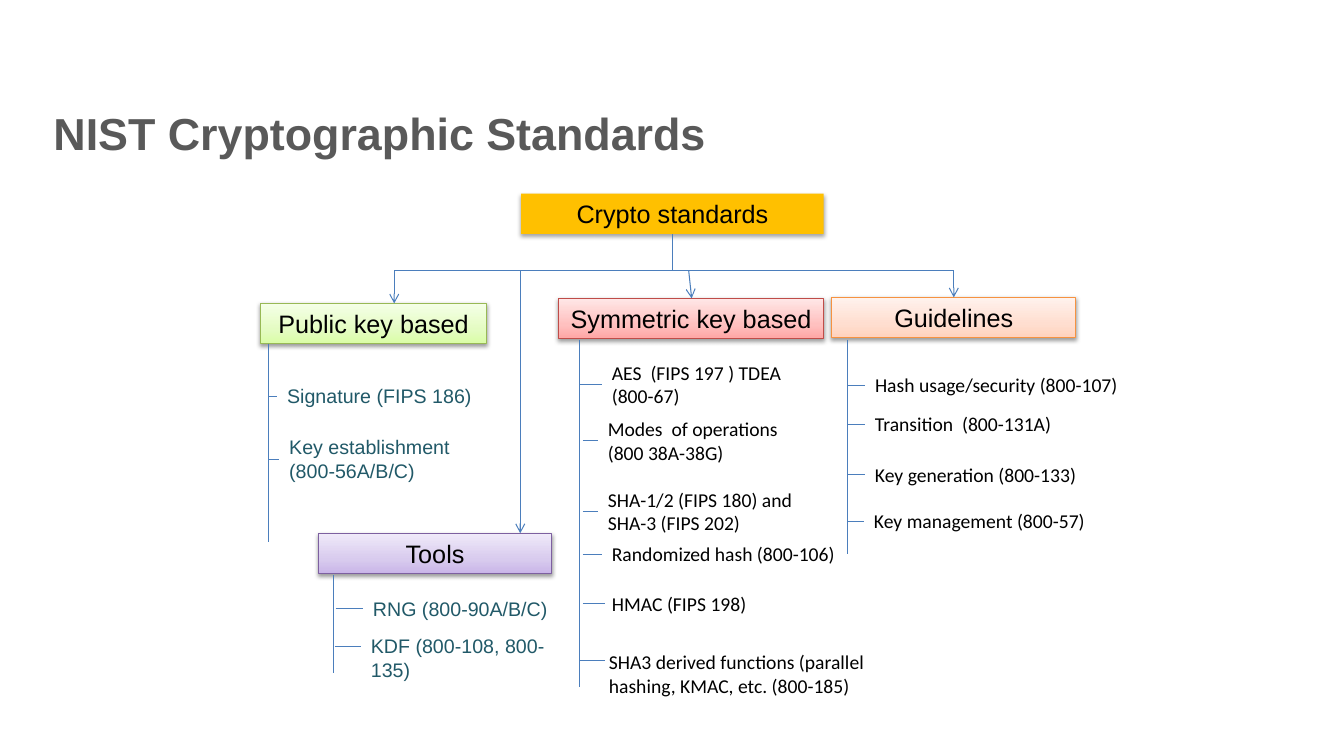
from copy import deepcopy
from dataclasses import dataclass

from lxml import etree
from pptx import Presentation, util as u
from pptx.dml.color import RGBColor
from pptx.enum import shapes, text
from pptx.oxml.ns import qn

# Grid: square cells, 13.33 columns by 7.5 rows
CELL = u.Inches(1)
COLUMNS, ROWS = 13.33, 7.5
ONE_LINE, TWO_LINES, BOX_ROWS = 0.34, 0.57, 0.4


@dataclass(frozen=True)
class Theme:
    sans: str = "Arial"
    humanist: str = "Calibri"
    title_size: int = 32
    box_size: int = 18
    item_size: int = 14
    title: str = "595959"
    black: str = "000000"
    teal: str = "215968"
    line: str = "4B7EBC"
    line_width: float = 0.75
    root: tuple = ("FFC000",)
    green: tuple = ("DAFDA7", "E4FCC2", "F5FFE7")
    purple: tuple = ("C9B5E8", "D8CBEE", "F0EAF9")
    red: tuple = ("FFA6A5", "FFC0BF", "FFE7E7")
    orange: tuple = ("FFD2BD", "FFDED0", "FFF2ED")
    green_edge: str = "98B955"
    purple_edge: str = "7D60A0"
    red_edge: str = "BF4C48"
    orange_edge: str = "F69240"
    gradient_stops: tuple = (0, 0.35, 1)


THEME = Theme()


@dataclass
class Item:
    label: str
    left: float
    top: float
    width: float
    tick_start: float
    height: float = ONE_LINE
    tick_end: float = None
    tick_row: float = None


def cells(*values):
    return [round(value * CELL) for value in values]


def color(value):
    return RGBColor.from_string(value)


def style_text(paragraph, font_name, size, value, bold=False):
    for run in paragraph.runs:
        run.font.name, run.font.size = font_name, u.Pt(size)
        run.font.color.rgb, run.font.bold = color(value), bold


def set_shadow(shape, alpha, distance):
    effects = shape._element.spPr.find(qn("a:effectLst"))
    shadow = etree.SubElement(
        effects, qn("a:outerShdw"), blurRad=str(u.Pt(3.1)), dist=str(u.Pt(distance)),
        dir="5400000", rotWithShape="0")
    black = etree.SubElement(shadow, qn("a:srgbClr"), val=THEME.black)
    etree.SubElement(black, qn("a:alpha"), val=str(alpha * 1000))


def set_gradient(shape, colors):
    shape.fill.gradient()
    shape.fill.gradient_angle = 90
    stop_list = next(shape._element.spPr.iter(qn("a:gsLst")))
    stop_list.append(deepcopy(stop_list[0]))
    for stop, value, position in zip(shape.fill.gradient_stops, colors, THEME.gradient_stops):
        stop.color.rgb, stop.position = color(value), position


def add_title(slide, label):
    title = slide.shapes.title
    title.left, title.top, title.width, title.height = cells(0.43, 0.8, 12.33, 0.83)
    title.text_frame.text = label
    title.text_frame.vertical_anchor = text.MSO_ANCHOR.BOTTOM
    paragraph = title.text_frame.paragraphs[0]
    paragraph.alignment = text.PP_ALIGN.LEFT
    paragraph.line_spacing = u.Pt(26)
    style_text(paragraph, THEME.sans, THEME.title_size, THEME.title, bold=True)


def add_box(slide, label, left, top, width, colors, edge=None):
    shape = slide.shapes.add_shape(
        shapes.MSO_SHAPE.RECTANGLE, *cells(left, top, width, BOX_ROWS))
    if edge:
        set_gradient(shape, colors)
        shape.line.color.rgb, shape.line.width = color(edge), u.Pt(THEME.line_width)
    else:
        shape.fill.solid()
        shape.fill.fore_color.rgb = color(colors[0])
        shape.line.fill.background()
    shape.shadow.inherit = False
    set_shadow(shape, *((38, 1.6) if edge else (35, 1.8)))
    frame = shape.text_frame
    frame.text, frame.word_wrap = label, True
    frame.auto_size = text.MSO_AUTO_SIZE.SHAPE_TO_FIT_TEXT
    frame.paragraphs[0].alignment = text.PP_ALIGN.CENTER
    style_text(frame.paragraphs[0], THEME.sans, THEME.box_size, THEME.black)


def add_line(slide, start, end, arrow=False):
    line = slide.shapes.add_connector(
        shapes.MSO_CONNECTOR.STRAIGHT, *cells(*start, *end))
    line.line.color.rgb, line.line.width = color(THEME.line), u.Pt(THEME.line_width)
    if arrow:
        etree.SubElement(line.line._get_or_add_ln(), qn("a:tailEnd"), type="arrow")
    etree.SubElement(line._element.spPr, qn("a:effectLst"))


def add_item(slide, item, font_name, value):
    textbox = slide.shapes.add_textbox(*cells(item.left, item.top, item.width, item.height))
    frame = textbox.text_frame
    frame.text, frame.word_wrap = item.label, True
    frame.auto_size = text.MSO_AUTO_SIZE.SHAPE_TO_FIT_TEXT
    style_text(frame.paragraphs[0], font_name, THEME.item_size, value)
    row = item.tick_row or item.top + item.height / 2
    add_line(slide, (item.tick_start, row), (item.tick_end or item.left, row))


def add_branch(slide, trunk, items, font_name, value):
    column, top, bottom = trunk
    add_line(slide, (column, top), (column, bottom))
    for item in items:
        add_item(slide, item, font_name, value)


def main():
    presentation = Presentation()
    presentation.slide_width, presentation.slide_height = cells(COLUMNS, ROWS)
    slide = presentation.slides.add_slide(presentation.slide_layouts[5])
    add_title(slide, "NIST Cryptographic Standards")

    # Headings
    add_box(slide, "Crypto standards", 5.17, 1.92, 3, THEME.root)
    add_box(slide, "Public key based", 2.58, 3.01, 2.25, THEME.green, THEME.green_edge)
    add_box(slide, "Tools", 3.16, 5.29, 2.31, THEME.purple, THEME.purple_edge)
    add_box(slide, "Symmetric key based", 5.54, 2.96, 2.63, THEME.red, THEME.red_edge)
    add_box(slide, "Guidelines", 8.25, 2.95, 2.42, THEME.orange, THEME.orange_edge)

    # Bus from the root to each heading
    bus = 2.68
    add_line(slide, (6.67, 2.32), (6.67, bus))
    add_line(slide, (3.91, bus), (9.46, bus))
    for start, end, bottom in ((3.91, 3.91, 3.01), (5.16, 5.16, 5.29),
                               (6.83, 6.86, 2.96), (9.46, 9.46, 2.95)):
        add_line(slide, (start, bus), (end, bottom), arrow=True)

    # Branches: trunk column, top and bottom, then items
    add_branch(slide, (2.66, 3.41, 5.38), [
        Item("Signature (FIPS 186)", 2.75, 3.76, 2.1, 2.66),
        Item("Key establishment (800-56A/B/C)", 2.77, 4.27, 1.92, 2.66, TWO_LINES),
    ], THEME.sans, THEME.teal)
    add_branch(slide, (3.31, 5.7, 6.68), [
        Item("RNG (800-90A/B/C)", 3.6, 5.87, 2.12, 3.33),
        Item("KDF (800-108, 800-135)", 3.58, 6.24, 2.31, 3.32),
    ], THEME.sans, THEME.teal)
    add_branch(slide, (5.75, 3.37, 6.82), [
        Item("AES  (FIPS 197 ) TDEA (800-67)", 5.97, 3.53, 1.88, 5.75, TWO_LINES),
        Item("Modes  of operations (800 38A-38G)", 5.93, 4.09, 1.92, 5.78, TWO_LINES),
        Item("SHA-1/2 (FIPS 180) and SHA-3 (FIPS 202)", 5.93, 4.79, 2.24, 5.78, TWO_LINES),
        Item("Randomized hash (800-106)", 5.97, 5.33, 2.45, 5.78),
        Item("HMAC (FIPS 198)", 5.97, 5.82, 1.88, 5.78, tick_end=6),
        Item("SHA3 derived functions (parallel hashing, KMAC, etc. (800-185)",
             5.94, 6.4, 2.78, 5.75, TWO_LINES, tick_end=6, tick_row=6.55),
    ], THEME.humanist, THEME.black)
    add_branch(slide, (8.41, 3.37, 5.5), [
        Item("Hash usage/security (800-107)", 8.58, 3.65, 2.71, 8.41),
        Item("Transition  (800-131A)", 8.58, 4.04, 2, 8.41),
        Item("Key generation (800-133)", 8.58, 4.54, 2.3, 8.41),
        Item("Key management (800-57)", 8.57, 5, 2.3, 8.41),
    ], THEME.humanist, THEME.black)

    presentation.save("out.pptx")


if __name__ == "__main__":
    main()
